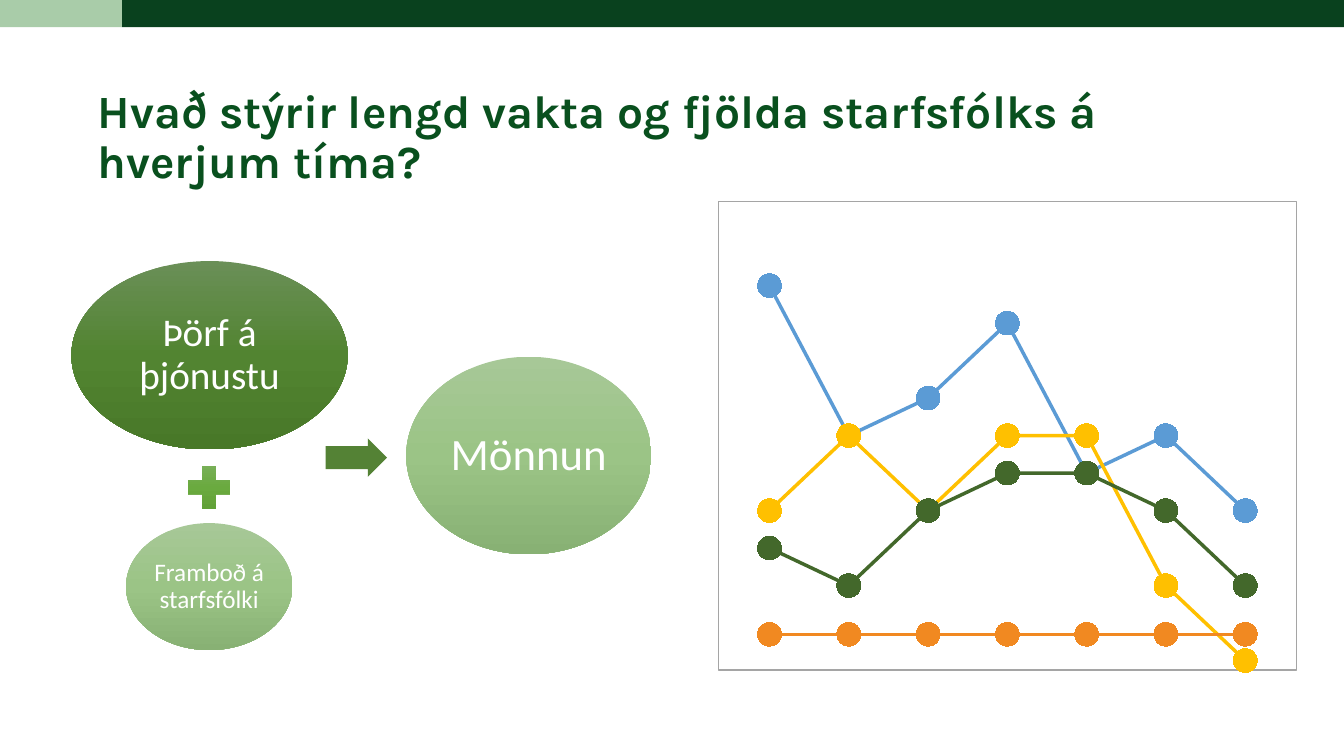
from copy import deepcopy

from lxml import etree
from pptx import Presentation
from pptx.chart.data import CategoryChartData
from pptx.dml.color import RGBColor
from pptx.enum.chart import XL_CHART_TYPE as ChartType, XL_MARKER_STYLE as Marker
from pptx.enum.shapes import MSO_SHAPE as Shape
from pptx.enum.text import MSO_ANCHOR as Anchor, MSO_AUTO_SIZE as AutoSize, PP_ALIGN as Align
from pptx.oxml import parse_xml
from pptx.oxml.ns import nsdecls, qn
from pptx.util import Pt

WHITE = RGBColor(0xFF, 0xFF, 0xFF)
BLACK = RGBColor(0, 0, 0)
DARK_BAR = RGBColor(0x09, 0x41, 0x1E)
LIGHT_BAR = RGBColor(0xA9, 0xCC, 0xA9)
TITLE_GREEN = RGBColor(0x09, 0x50, 0x1E)
ARROW_GREEN = RGBColor(0x54, 0x82, 0x35)
BORDER_GREY = RGBColor(0xA5, 0xA5, 0xA5)
DEEP = [RGBColor(0x6A, 0x8F, 0x57), RGBColor(0x52, 0x84, 0x31), RGBColor(0x48, 0x78, 0x28)]
FRESH = [RGBColor(0x7D, 0xB1, 0x60), RGBColor(0x6A, 0xAA, 0x3F), RGBColor(0x5D, 0x9C, 0x34)]
PALE = [RGBColor(0xA7, 0xC8, 0x97), RGBColor(0x9B, 0xC4, 0x86), RGBColor(0x88, 0xB1, 0x74)]

SERIES = [
    ("Series 1", [100, 60, 70, 90, 50, 60, 40], RGBColor(0x5B, 0x9B, 0xD5)),
    ("Series 2", [40, 60, 40, 60, 60, 20, 0], RGBColor(0xFF, 0xC0, 0x00)),
    ("Series 3", [30, 20, 40, 50, 50, 40, 20], RGBColor(0x43, 0x68, 0x2B)),
    ("Series 4", [7] * 7, RGBColor(0xF1, 0x89, 0x21)),
]
# Kind, centre x, centre y, width, height, colours, text, text size
DIAGRAM = [
    (Shape.OVAL, 98.7, 67.3, 197.3, 134.6, DEEP, "Þörf á þjónustu", 28),
    (Shape.MATH_PLUS, 98.4, 161.6, 41, 41, FRESH, "", 0),
    (Shape.OVAL, 98.4, 232.5, 118.8, 90.7, PALE, "Framboð á starfsfólki", 18),
    (Shape.RIGHT_ARROW, 203.5, 140.4, 43.9, 27.4, [ARROW_GREEN], "", 0),
    (Shape.OVAL, 326.7, 138.9, 175, 141.1, PALE, "Mönnun", 32),
]


def paint(shape, colours):
    if len(colours) == 1:
        shape.fill.solid()
        shape.fill.fore_color.rgb = colours[0]
        return
    # Three evenly spaced stops, running from top to bottom
    shape.fill.gradient()
    shape.fill.gradient_angle = 270
    stops = shape._element.spPr.find(".//" + qn("a:gsLst"))
    middle = deepcopy(stops[0])
    middle.set("pos", "50000")
    stops.insert(1, middle)
    for stop, colour in zip(shape.fill.gradient_stops, colours):
        stop.color.rgb = colour


def add_plain_shape(slide, kind, box, colours):
    shape = slide.shapes.add_shape(kind, *(Pt(length) for length in box))
    shape.shadow.inherit = False
    shape.line.fill.background()
    paint(shape, colours)
    return shape


def add_top_bar(slide, box):
    left, top, width, height = box
    split = 87.1
    add_plain_shape(slide, Shape.RECTANGLE, (left + split, top, width - split, height), [DARK_BAR])
    add_plain_shape(slide, Shape.RECTANGLE, (left, top, split, height), [LIGHT_BAR])


def add_title(slide, box):
    title = slide.shapes.title
    title.left, title.top, title.width, title.height = (Pt(length) for length in box)
    frame = title.text_frame
    frame.text = "Hvað stýrir lengd vakta og fjölda starfsfólks á hverjum tíma?"
    frame.word_wrap = True
    frame.auto_size = AutoSize.NONE
    frame.vertical_anchor = Anchor.TOP
    para = frame.paragraphs[0]
    para.alignment = Align.LEFT
    para.line_spacing = 0.9
    para.font.name = "Karla"
    para.font.size = Pt(33)
    para.font.bold = True
    para.font.color.rgb = TITLE_GREEN


def add_label(shape, text, size):
    frame = shape.text_frame
    frame.text = text
    frame.word_wrap = True
    frame.vertical_anchor = Anchor.MIDDLE
    frame.margin_left = frame.margin_right = frame.margin_top = frame.margin_bottom = Pt(2.5)
    para = frame.paragraphs[0]
    para.alignment = Align.CENTER
    para.line_spacing = 0.9
    para.font.name = "Calibri"
    para.font.size = Pt(size)
    para.font.color.rgb = WHITE


def add_diagram(slide, box):
    left, top = box[:2]
    for kind, x, y, width, height, colours, text, size in DIAGRAM:
        place = (left + x - width / 2, top + y - height / 2, width, height)
        shape = add_plain_shape(slide, kind, place, colours)
        if kind == Shape.RIGHT_ARROW:
            shape.adjustments[0] = 0.6
        if text:
            add_label(shape, text, size)


def move_last_series_to_right_axis(plot_area, maximum):
    left_lines = plot_area.find(qn("c:lineChart"))
    right_lines = deepcopy(left_lines)
    left_lines.remove(left_lines.findall(qn("c:ser"))[-1])
    for series in right_lines.findall(qn("c:ser"))[:-1]:
        right_lines.remove(series)
    left_lines.addnext(right_lines)

    # Second pair of axes with its own ids and scale
    axes = [plot_area.find(qn(tag)) for tag in ("c:catAx", "c:valAx")]
    ids = {axis.find(qn("c:axId")).get("val"): str(5001 + i) for i, axis in enumerate(axes)}
    copies = [deepcopy(axis) for axis in axes]
    axes[-1].addnext(copies[0])
    copies[0].addnext(copies[1])
    for part in [right_lines, *copies]:
        for tag in ("c:axId", "c:crossAx"):
            for node in part.findall(qn(tag)):
                node.set("val", ids[node.get("val")])
    copies[1].find(qn("c:scaling")).find(qn("c:max")).set("val", str(maximum))
    copies[1].find(qn("c:axPos")).set("val", "r")
    copies[1].find(qn("c:crosses")).set("val", "max")


def set_plot_layout(plot_area, x, y, width, height):
    for old in plot_area.findall(qn("c:layout")):
        plot_area.remove(old)
    layout = etree.Element(qn("c:layout"))
    manual = etree.SubElement(layout, qn("c:manualLayout"))
    settings = [("layoutTarget", "inner"), ("xMode", "edge"), ("yMode", "edge"),
                ("x", x), ("y", y), ("w", width), ("h", height)]
    for name, value in settings:
        etree.SubElement(manual, qn("c:" + name)).set("val", str(value))
    plot_area.insert(0, layout)


def add_line_chart(slide, box):
    data = CategoryChartData()
    data.categories = [str(number) for number in range(1, 8)]
    for name, values, _ in SERIES:
        data.add_series(name, values)
    place = (Pt(length) for length in box)
    chart = slide.shapes.add_chart(ChartType.LINE_MARKERS, *place, data).chart
    chart.has_legend = False
    chart.has_title = False
    chart.font.name = "Calibri"
    chart.font.size = Pt(10)
    chart.font.color.rgb = BLACK

    # Lines and markers
    chart.plots[0].vary_by_categories = False
    for series, (_, _, colour) in zip(chart.plots[0].series, SERIES):
        series.smooth = False
        series.format.line.color.rgb = colour
        series.format.line.width = Pt(2.5)
        series.marker.style = Marker.CIRCLE
        series.marker.size = 17
        series.marker.format.fill.solid()
        series.marker.format.fill.fore_color.rgb = colour
        series.marker.format.line.color.rgb = colour

    # Hidden axes
    value_axis = chart.value_axis
    value_axis.minimum_scale, value_axis.maximum_scale = 0, 120
    value_axis.has_major_gridlines = False
    value_axis.visible = chart.category_axis.visible = False

    space = chart._chartSpace
    plot_area = space.find(".//" + qn("c:plotArea"))
    move_last_series_to_right_axis(plot_area, 12)
    set_plot_layout(plot_area, 0.02, 0.02, 0.96, 0.96)

    # Frame
    space.find(qn("c:chart")).addnext(parse_xml(
        f'<c:spPr {nsdecls("c", "a")}>'
        f'<a:solidFill><a:srgbClr val="{WHITE}"/></a:solidFill>'
        f'<a:ln w="{Pt(1)}"><a:solidFill><a:srgbClr val="{BORDER_GREY}"/></a:solidFill></a:ln>'
        '</c:spPr>'))


def main():
    deck = Presentation()
    deck.slide_width, deck.slide_height = Pt(960), Pt(540)
    slide = deck.slides.add_slide(deck.slide_layouts[5])
    add_top_bar(slide, (0, 0, 960, 19.4))
    add_title(slide, (62.6, 59.8, 849.6, 84.2))
    add_diagram(slide, (51, 186.5, 414, 278))
    add_line_chart(slide, (512.6, 143.3, 414, 337))
    deck.save("out.pptx")


if __name__ == "__main__":
    main()
